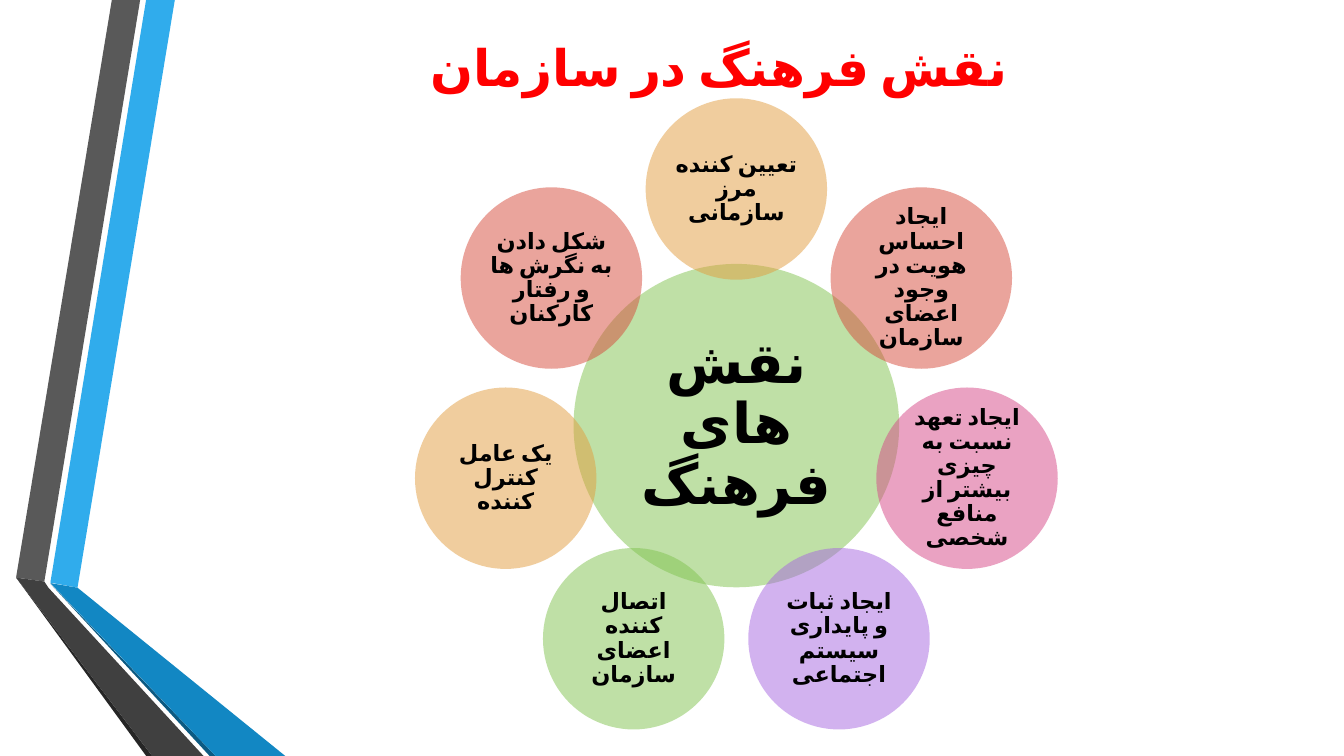
"""Builds the slide on the role of culture in an organization."""
from math import cos, radians, sin

from lxml.etree import SubElement
from pptx import Presentation
from pptx.dml.color import RGBColor
from pptx.enum.shapes import MSO_SHAPE as SHAPE
from pptx.enum.text import MSO_ANCHOR as ANCHOR, PP_ALIGN as ALIGN
from pptx.oxml.ns import qn
from pptx.util import Pt

FONT = "Cabin"
COLORS = {
    "sky": "30ACEC", "blue": "1287C3", "navy": "0C5A82",
    "gray": "595959", "charcoal": "404040", "coal": "262626",
    "green": "80C34F", "amber": "E29D3E", "coral": "D64A3B",
    "pink": "D64787", "violet": "A666E1", "red": "FF0000", "black": "000000",
}


def write(frame, text, size, color="black", anchor=ANCHOR.MIDDLE, inset=0, spacing=1.0):
    """Set one centred, bold, right-to-left paragraph in a text frame."""
    frame.word_wrap = True
    frame.vertical_anchor = anchor
    frame.margin_left = frame.margin_right = Pt(inset)
    frame.margin_top = frame.margin_bottom = Pt(inset)
    paragraph = frame.paragraphs[0]
    paragraph.alignment = ALIGN.CENTER
    paragraph.line_spacing = spacing
    paragraph._p.get_or_add_pPr().set("rtl", "1")
    run = paragraph.add_run()
    run.text = text
    run.font.size = Pt(size)
    run.font.bold = True
    run.font.name = FONT
    run.font.color.rgb = RGBColor.from_string(COLORS[color])
    properties = run._r.get_or_add_rPr()
    properties.set("lang", "fa-IR")
    SubElement(properties, qn("a:cs")).set("typeface", FONT)


def paint(shape, color, opacity=100):
    """Give a shape a plain fill with no line or shadow."""
    shape.shadow.inherit = False
    shape.line.fill.background()
    shape.fill.solid()
    shape.fill.fore_color.rgb = RGBColor.from_string(COLORS[color])
    if opacity < 100:
        tint = shape._element.spPr.find(".//" + qn("a:srgbClr"))
        SubElement(tint, qn("a:alpha")).set("val", str(opacity * 1000))


deck = Presentation()
deck.slide_width, deck.slide_height = Pt(960), Pt(540)
slide = deck.slides.add_slide(deck.slide_layouts[6])
shapes = slide.shapes

ribbons = [
    ("sky", [(36, 416.2), (55.4, 419.8), (124.9, 0), (104.4, 0)]),
    ("gray", [(100.1, 0), (79.9, 0), (11.5, 412.6), (31.7, 415.4)]),
    ("coal", [(11.5, 412.6), (104.4, 540), (108.7, 540)]),
    ("navy", [(36, 416.9), (149.8, 540), (154.1, 540)]),
    ("blue", [(36, 416.5), (154.1, 540), (203.8, 540), (55.4, 419.8)]),
    ("charcoal", [(145.4, 540), (34.6, 419.8), (31.7, 415.4), (11.5, 412.6), (108.7, 540)]),
]
for color, corners in ribbons:
    start, *rest = [(Pt(x), Pt(y)) for x, y in corners]
    outline = shapes.build_freeform(*start)
    outline.add_line_segments(rest, close=True)
    paint(outline.convert_to_shape(), color)

title = shapes.add_textbox(Pt(119), Pt(24.5), Pt(789), Pt(83))
write(title.text_frame, "نقش فرهنگ در سازمان", 36, color="red", anchor=ANCHOR.TOP, inset=1)

center_x, center_y, ring_radius = 526, 304, 169
hub_width, hub_height, role_size = 232.6, 231, 129.6

hub = shapes.add_shape(SHAPE.OVAL, Pt(center_x - hub_width / 2), Pt(center_y - hub_height / 2),
                       Pt(hub_width), Pt(hub_height))
paint(hub, "green", opacity=50)
write(hub.text_frame, "نقش های فرهنگ", 40, inset=4.3, spacing=0.9)

roles = [
    ("تعیین کننده مرز سازمانی", "amber"),
    ("ایجاد احساس هویت در وجود اعضای سازمان", "coral"),
    ("ایجاد تعهد نسبت به چیزی بیشتر از منافع شخصی", "pink"),
    ("ایجاد ثبات و پایداری سیستم اجتماعی", "violet"),
    ("اتصال کننده اعضای سازمان", "green"),
    ("یک عامل کنترل کننده", "amber"),
    ("شکل دادن به نگرش ها و رفتار کارکنان", "coral"),
]
for index, (text, color) in enumerate(roles):
    angle = radians(360 * index / len(roles))
    left = center_x + ring_radius * sin(angle) - role_size / 2
    top = center_y - ring_radius * cos(angle) - role_size / 2
    role = shapes.add_shape(SHAPE.OVAL, Pt(left), Pt(top), Pt(role_size), Pt(role_size))
    paint(role, color, opacity=50)
    write(role.text_frame, text, 16, inset=1.4, spacing=0.9)

deck.save("out.pptx")
